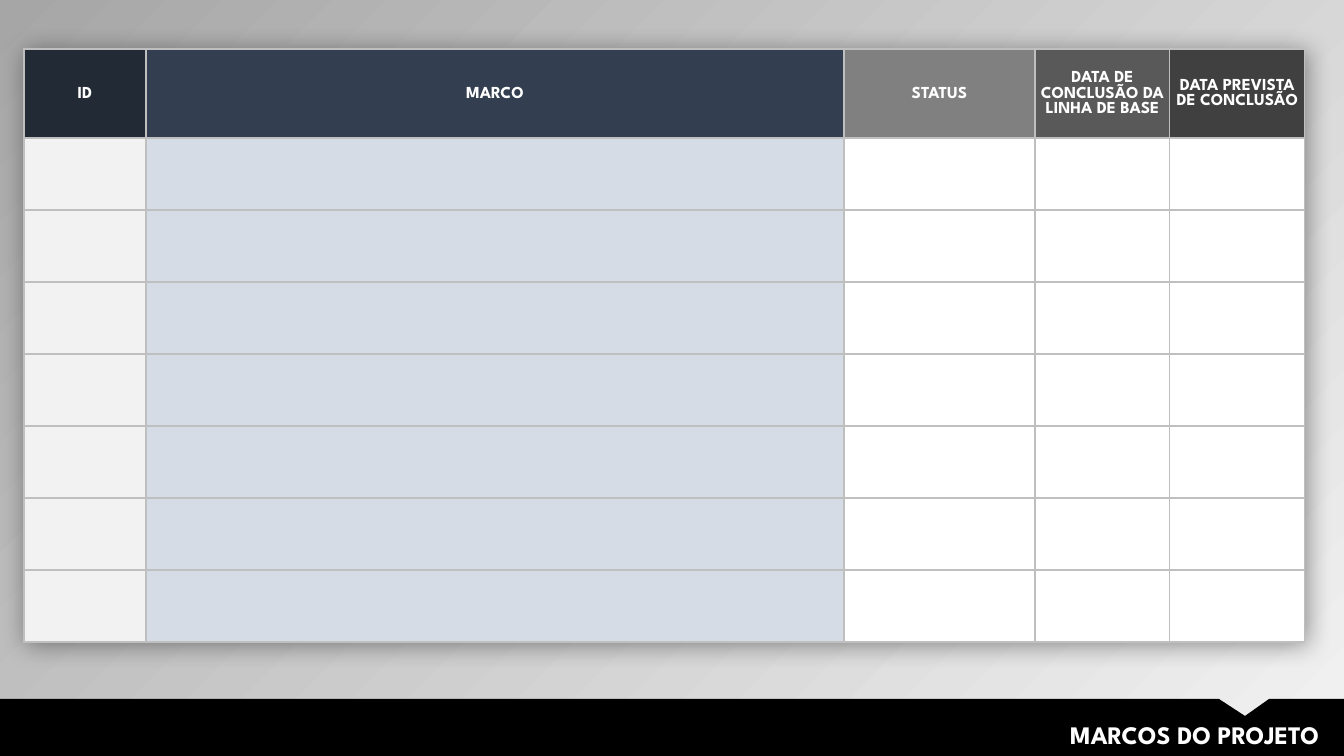
from lxml.etree import SubElement as Sub
from pptx import Presentation
from pptx.dml.color import RGBColor
from pptx.enum.text import MSO_ANCHOR as Anchor, PP_ALIGN as Align
from pptx.oxml.ns import qn
from pptx.util import Pt

SCALE = 914400 / 100.8  # EMU per px
FONT = {"name": "League Spartan", "bold": True}
EDGE = "BFBFBF"
HEADS = [  # text, width, head fill, body fill
    ("ID", 122, "222A35", "F2F2F2"),
    ("MARCO", 698, "333F50", "D6DCE5"),
    ("STATUS", 191, "808080", "FFFFFF"),
    ("DATA DE CONCLUSÃO DA LINHA DE BASE", 135, "595959", "FFFFFF"),
    ("DATA PREVISTA DE CONCLUSÃO", 135, "404040", "FFFFFF"),
]
ROWS, HEAD_H, ROW_H = 7, 89, 72


def px(num):
    return round(num * SCALE)


def color(code):
    return RGBColor.from_string(code)


def fmt(item, vals):
    for key, val in vals.items():
        setattr(item, key, val)


def paint(item, code):
    item.fill.solid()
    item.fill.fore_color.rgb = color(code)


def write(frame, text, size, align):
    para = frame.paragraphs[0]
    para.alignment = align
    run = para.add_run()
    run.text = text
    fmt(run.font, {**FONT, "size": Pt(size)})
    run.font.color.rgb = color("FFFFFF")


def backdrop(slide):
    fill = slide.background.fill
    fill.gradient()
    fill.gradient_angle = 135
    for stop, code in zip(fill.gradient_stops, ("F2F2F2", "A6A6A6")):
        stop.color.rgb = color(code)


def footer(slide):
    points = [(1219, 699), (1245, 716), (1269, 699), (1344, 699),
              (1344, 756), (0, 756)]
    build = slide.shapes.build_freeform(0, px(699))
    build.add_line_segments([(px(x), px(y)) for x, y in points])
    band = build.convert_to_shape()
    paint(band, "000000")
    band.line.fill.background()
    band.shadow.inherit = False


def border(cell):
    props = cell._tc.get_or_add_tcPr()
    for spot, side in enumerate(("lnL", "lnR", "lnT", "lnB")):
        line = props.makeelement(qn(f"a:{side}"), {"w": str(Pt(1))})
        fill = Sub(line, qn("a:solidFill"))
        Sub(fill, qn("a:srgbClr"), val=EDGE)
        props.insert(spot, line)


def shade(table):
    props = table._tbl.tblPr
    effect = props.makeelement(qn("a:effectLst"), {})
    props.insert(0, effect)
    glow = Sub(effect, qn("a:outerShdw"), blurRad=str(px(25)),
               dist=str(px(4)), dir="2700000", algn="tl", rotWithShape="0")
    tint = Sub(glow, qn("a:srgbClr"), val="000000")
    Sub(tint, qn("a:alpha"), val="40000")


def grid(slide):
    width = sum(head[1] for head in HEADS)
    frame = slide.shapes.add_table(
        ROWS + 1, len(HEADS), px(24), px(49), px(width),
        px(HEAD_H + ROWS * ROW_H))
    table = frame.table
    fmt(table, {"first_row": False, "horz_banding": False})
    shade(table)
    for num, row in enumerate(table.rows):
        row.height = px(ROW_H if num else HEAD_H)
    inset = {"margin_left": px(1), "margin_right": px(1),
             "margin_top": px(1), "margin_bottom": 0,
             "vertical_anchor": Anchor.MIDDLE}
    for col, (text, wide, dark, light) in enumerate(HEADS):
        table.columns[col].width = px(wide)
        for num in range(ROWS + 1):
            cell = table.cell(num, col)
            paint(cell, light if num else dark)
            border(cell)
        top = table.cell(0, col)
        fmt(top, inset)
        write(top.text_frame, text, 12, Align.CENTER)


def title(slide):
    box = slide.shapes.add_textbox(px(646), px(714), px(683), px(40))
    box.text_frame.word_wrap = True
    write(box.text_frame, "MARCOS DO PROJETO", 18, Align.RIGHT)


def main():
    deck = Presentation()
    fmt(deck, {"slide_width": px(1344), "slide_height": px(756)})
    slide = deck.slides.add_slide(deck.slide_layouts[6])
    backdrop(slide)
    footer(slide)
    grid(slide)
    title(slide)
    deck.save("out.pptx")


if __name__ == "__main__":
    main()
